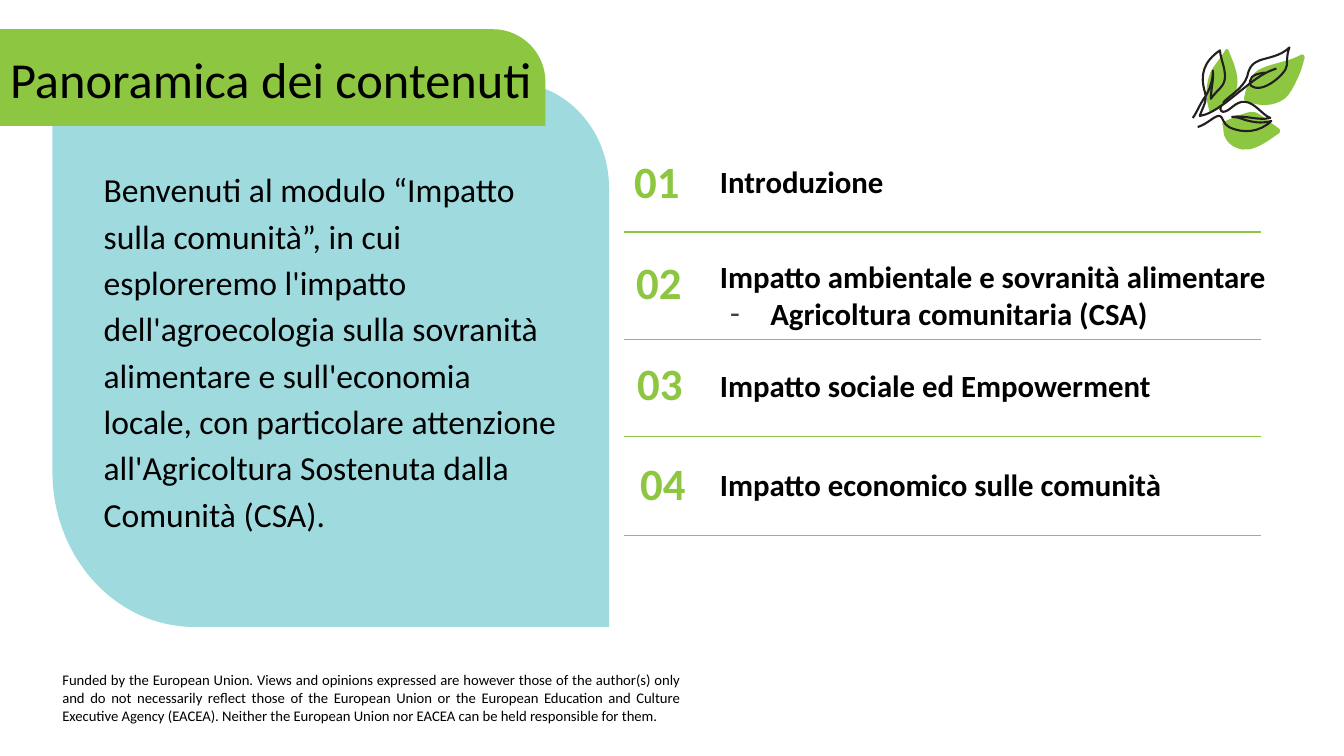
from dataclasses import dataclass

from lxml import etree
from pptx import Presentation
from pptx.dml.color import RGBColor
from pptx.enum.shapes import MSO_CONNECTOR
from pptx.enum.text import MSO_ANCHOR, MSO_AUTO_SIZE, PP_ALIGN
from pptx.oxml.ns import qn
from pptx.util import Inches, Pt

STRAIGHT = MSO_CONNECTOR.STRAIGHT
TOP, MIDDLE = MSO_ANCHOR.TOP, MSO_ANCHOR.MIDDLE
LEFT, CENTER, JUSTIFY = PP_ALIGN.LEFT, PP_ALIGN.CENTER, PP_ALIGN.JUSTIFY
NO_AUTOFIT = MSO_AUTO_SIZE.NONE

COLUMNS, ROWS = 13.33, 7.5
SLIDE_WIDTH, SLIDE_HEIGHT = Inches(13.33), Inches(7.5)
COMPARISON_LAYOUT = 4


@dataclass(frozen=True)
class Style:
    size: float
    color: str = "000000"
    bold: bool = False
    align: PP_ALIGN = LEFT
    spacing: float = 1.0
    anchor: MSO_ANCHOR = MIDDLE
    vertical_inset: float = 0.05


@dataclass(frozen=True)
class Theme:
    font: str = "Calibri"
    green: str = "8DC641"
    blue: str = "9FDADF"
    ink: str = "231F20"
    dash: str = "374151"
    title: Style = Style(36, spacing=0.9)
    intro: Style = Style(24, spacing=1.15, anchor=TOP)
    number: Style = Style(32, "8DC641", True, CENTER, 0.9)
    entry: Style = Style(22, bold=True, spacing=0.9, vertical_inset=0)
    long_entry: Style = Style(22, bold=True, vertical_inset=0)
    disclaimer: Style = Style(10.5, align=JUSTIFY, anchor=TOP)


@dataclass(frozen=True)
class Area:
    column: float
    row: float
    columns: float
    rows: float


@dataclass(frozen=True)
class Entry:
    text: str
    area: Area
    number_column: float
    rule_row: float
    style: Style


@dataclass(frozen=True)
class Outline:
    """A start point, then steps: (x, y) is a line, six numbers are a cubic curve."""
    start: tuple
    steps: tuple


THEME = Theme()
ENTRIES = (
    Entry("Introduzione", Area(7.04, 1.45, 4.88, 0.75), 6.13, 2.3, THEME.entry),
    Entry("Impatto ambientale e sovranità alimentare\nAgricoltura comunitaria (CSA)",
          Area(7.04, 2.55, 5.98, 0.75), 6.15, 3.37, THEME.long_entry),
    Entry("Impatto sociale ed Empowerment", Area(7.04, 3.47, 4.88, 0.75), 6.16, 4.33, THEME.entry),
    Entry("Impatto economico sulle comunità", Area(7.04, 4.45, 4.88, 0.75), 6.19, 5.31, THEME.entry),
)
INTRO = ("Benvenuti al modulo “Impatto sulla comunità”, in cui esploreremo l'impatto "
         "dell'agroecologia sulla sovranità alimentare e sull'economia locale, con particolare "
         "attenzione all'Agricoltura Sostenuta dalla Comunità (CSA).")
DISCLAIMER = ("Funded by the European Union. Views and opinions expressed are however those of the "
              "author(s) only and do not necessarily reflect those of the European Union or the "
              "European Education and Culture Executive Agency (EACEA). Neither the European Union "
              "nor EACEA can be held responsible for them.")
PANEL = Outline((6.04, 6.22), (
    (1.93, 6.22), (1.15, 6.22, 0.52, 5.53, 0.52, 4.68), (0.52, 0.82),
    (5.08, 0.82), (5.61, 0.82, 6.04, 1.29, 6.04, 1.86)))
BANNER = Outline((-0.02, 0.29), (
    (4.89, 0.29), (5.18, 0.29, 5.41, 0.53, 5.41, 0.81), (5.41, 1.25),
    (0, 1.25), (0, 0.48), (0, 0.44, 0, 0.41, -0.01, 0.37)))
LEAVES = (
    Outline((12.05, 1.1), (
        (12.15, 1.05, 12.25, 0.97, 12.27, 0.86), (12.29, 0.74, 12.23, 0.61, 12.18, 0.49),
        (12.18, 0.48, 12.15, 0.48, 12.15, 0.5), (12.12, 0.56, 12.08, 0.6, 12.04, 0.66),
        (12.01, 0.7, 11.99, 0.75, 11.98, 0.8), (11.96, 0.89, 11.96, 0.99, 11.99, 1.08),
        (11.98, 1.09, 12, 1.12, 12.02, 1.11))),
    Outline((12.74, 0.98), (
        (12.8, 0.93, 12.83, 0.86, 12.86, 0.8), (12.9, 0.72, 12.92, 0.65, 12.94, 0.57),
        (12.94, 0.55, 12.93, 0.54, 12.91, 0.54), (12.84, 0.58, 12.77, 0.6, 12.69, 0.62),
        (12.63, 0.64, 12.57, 0.65, 12.51, 0.68), (12.46, 0.7, 12.42, 0.74, 12.4, 0.79),
        (12.37, 0.85, 12.35, 0.91, 12.34, 0.97), (12.33, 0.99, 12.34, 1, 12.36, 1),
        (12.48, 1.06, 12.63, 1.06, 12.74, 0.98))),
    Outline((12.69, 1.32), (
        (12.7, 1.31, 12.7, 1.29, 12.69, 1.28), (12.64, 1.24, 12.59, 1.21, 12.54, 1.17),
        (12.5, 1.14, 12.47, 1.11, 12.42, 1.11), (12.38, 1.11, 12.34, 1.13, 12.3, 1.14),
        (12.26, 1.16, 12.22, 1.17, 12.18, 1.19), (12.17, 1.19, 12.15, 1.21, 12.13, 1.21),
        (12.12, 1.22, 12.12, 1.24, 12.13, 1.25), (12.13, 1.28, 12.14, 1.32, 12.14, 1.34),
        (12.16, 1.4, 12.21, 1.45, 12.27, 1.47), (12.42, 1.53, 12.57, 1.4, 12.69, 1.32))),
)
TWIGS = (
    Outline((11.83, 1.17), (
        (11.87, 1.12, 11.9, 1.03, 11.96, 0.95), (12, 0.88, 12.03, 0.8, 12.03, 0.7),
        (12.04, 0.8, 12.01, 0.88, 12.01, 0.98), (12.08, 0.88, 12.15, 0.86, 12.15, 0.76),
        (12.15, 0.66, 12.11, 0.6, 12.1, 0.5), (11.94, 0.61, 11.9, 0.74, 11.95, 0.91),
        (11.98, 1, 11.93, 1.06, 11.9, 1.15), (11.97, 1.14, 12.04, 1.1, 12.11, 1.05),
        (12.17, 1.01, 12.22, 0.97, 12.28, 0.92), (12.4, 0.83, 12.5, 0.73, 12.66, 0.68))),
    Outline((12.13, 1.02), (
        (12.19, 0.95, 12.33, 0.88, 12.37, 0.76), (12.39, 0.68, 12.4, 0.64, 12.49, 0.6),
        (12.57, 0.57, 12.7, 0.56, 12.79, 0.47), (12.75, 0.57, 12.78, 0.64, 12.75, 0.69),
        (12.7, 0.77, 12.58, 0.86, 12.5, 0.87), (12.42, 0.88, 12.38, 0.84, 12.4, 0.8),
        (12.41, 0.74, 12.48, 0.73, 12.55, 0.72))),
    Outline((11.88, 1.26), (
        (11.98, 1.23, 12.05, 1.14, 12.1, 1.15), (12.13, 1.16, 12.13, 1.23, 12.19, 1.26),
        (12.33, 1.33, 12.5, 1.31, 12.61, 1.2), (12.5, 1.23, 12.43, 1.21, 12.35, 1.19),
        (12.3, 1.17, 12.26, 1.16, 12.22, 1.16), (12.35, 1.14, 12.48, 1.2, 12.6, 1.17),
        (12.52, 1.14, 12.45, 1.02, 12.35, 1.01), (12.25, 1, 12.2, 1.11, 12.13, 1.11),
        (12.1, 1.1, 12.1, 1.07, 12.11, 1.05))),
)


def across(columns: float) -> int:
    return round(SLIDE_WIDTH * columns / COLUMNS)


def down(rows: float) -> int:
    return round(SLIDE_HEIGHT * rows / ROWS)


def draw_outlines(shapes, outlines: tuple, color: str, filled: bool = True) -> None:
    """Draw all outlines as one freeform, then bend its curved steps."""
    builder = shapes.build_freeform(across(outlines[0].start[0]), down(outlines[0].start[1]))
    for index, outline in enumerate(outlines):
        if index:
            builder.move_to(across(outline.start[0]), down(outline.start[1]))
        ends = [(across(step[-2]), down(step[-1])) for step in outline.steps]
        builder.add_line_segments(ends, close=filled)
    shape = builder.convert_to_shape()
    steps = [step for outline in outlines for step in outline.steps]
    for segment, step in zip(list(shape._element.iter(qn("a:lnTo"))), steps):
        if len(step) == 6:
            segment.tag = qn("a:cubicBezTo")
            for position, (x, y) in enumerate((step[:2], step[2:4])):
                point = etree.Element(qn("a:pt"), x=str(across(x) - shape.left),
                                      y=str(down(y) - shape.top))
                segment.insert(position, point)
    shape.shadow.inherit = False
    if filled:
        shape.fill.solid()
        shape.fill.fore_color.rgb = RGBColor.from_string(color)
        shape.line.fill.background()
    else:
        shape.fill.background()
        shape.line.color.rgb = RGBColor.from_string(color)
        shape.line.width = Pt(1.5)


def draw_rule(slide, row: float) -> None:
    rule = slide.shapes.add_connector(STRAIGHT, across(12.51), down(row), across(6.19), down(row))
    rule.line.color.rgb = RGBColor.from_string(THEME.green)
    rule.line.width = Pt(1)
    etree.SubElement(rule._element.spPr, qn("a:effectLst"))


def set_bullet(paragraph, dashed: bool) -> None:
    properties = paragraph._p.get_or_add_pPr()
    properties.set("marL", str(Inches(0.5) if dashed else 0))
    properties.set("indent", str(Inches(-0.4) if dashed else 0))
    if dashed:
        color = etree.SubElement(properties, qn("a:buClr"))
        etree.SubElement(color, qn("a:srgbClr"), val=THEME.dash)
        etree.SubElement(properties, qn("a:buChar"), char="-")
    else:
        etree.SubElement(properties, qn("a:buNone"))


def write(slide, text: str, area: Area, style: Style, placeholder=None) -> None:
    """Fill a new text box, or a placeholder brought to the front; later lines get a dash."""
    position = across(area.column), down(area.row), across(area.columns), down(area.rows)
    shape = placeholder or slide.shapes.add_textbox(*position)
    shape.left, shape.top, shape.width, shape.height = position
    slide.shapes._spTree.append(shape._element)
    frame = shape.text_frame
    frame.text = text
    frame.word_wrap = True
    frame.auto_size = NO_AUTOFIT
    frame.vertical_anchor = style.anchor
    frame.margin_left = frame.margin_right = Inches(0.1)
    frame.margin_top = frame.margin_bottom = Inches(style.vertical_inset)
    for index, paragraph in enumerate(frame.paragraphs):
        set_bullet(paragraph, dashed=index > 0)
        paragraph.alignment = style.align
        paragraph.line_spacing = style.spacing
        paragraph.space_before = Pt(0)
        for run in paragraph.runs:
            run.font.name = THEME.font
            run.font.size = Pt(style.size)
            run.font.bold = style.bold
            run.font.color.rgb = RGBColor.from_string(style.color)


def main() -> None:
    presentation = Presentation()
    presentation.slide_width, presentation.slide_height = SLIDE_WIDTH, SLIDE_HEIGHT
    slide = presentation.slides.add_slide(presentation.slide_layouts[COMPARISON_LAYOUT])
    title, *bodies = list(slide.placeholders)
    draw_outlines(slide.shapes, (PANEL,), THEME.blue)
    draw_outlines(slide.shapes, (BANNER,), THEME.green)
    for entry in ENTRIES:
        draw_rule(slide, entry.rule_row)
    write(slide, DISCLAIMER, Area(0.52, 6.61, 6.33, 0.66), THEME.disclaimer)
    write(slide, INTRO, Area(0.93, 1.57, 4.73, 4.36), THEME.intro)
    for index, (entry, body) in enumerate(zip(ENTRIES, bodies)):
        number_area = Area(entry.number_column, 1.45 + index, 0.77, 0.75)
        write(slide, f"{index + 1:02}", number_area, THEME.number)
        write(slide, entry.text, entry.area, entry.style, body)
    write(slide, "Panoramica dei contenuti", Area(0, 0.42, 5.51, 0.79), THEME.title, title)
    sprig = slide.shapes.add_group_shape()
    for leaf in LEAVES:
        draw_outlines(sprig.shapes, (leaf,), THEME.green)
    draw_outlines(sprig.shapes, TWIGS, THEME.ink, filled=False)
    presentation.save("out.pptx")


if __name__ == "__main__":
    main()
